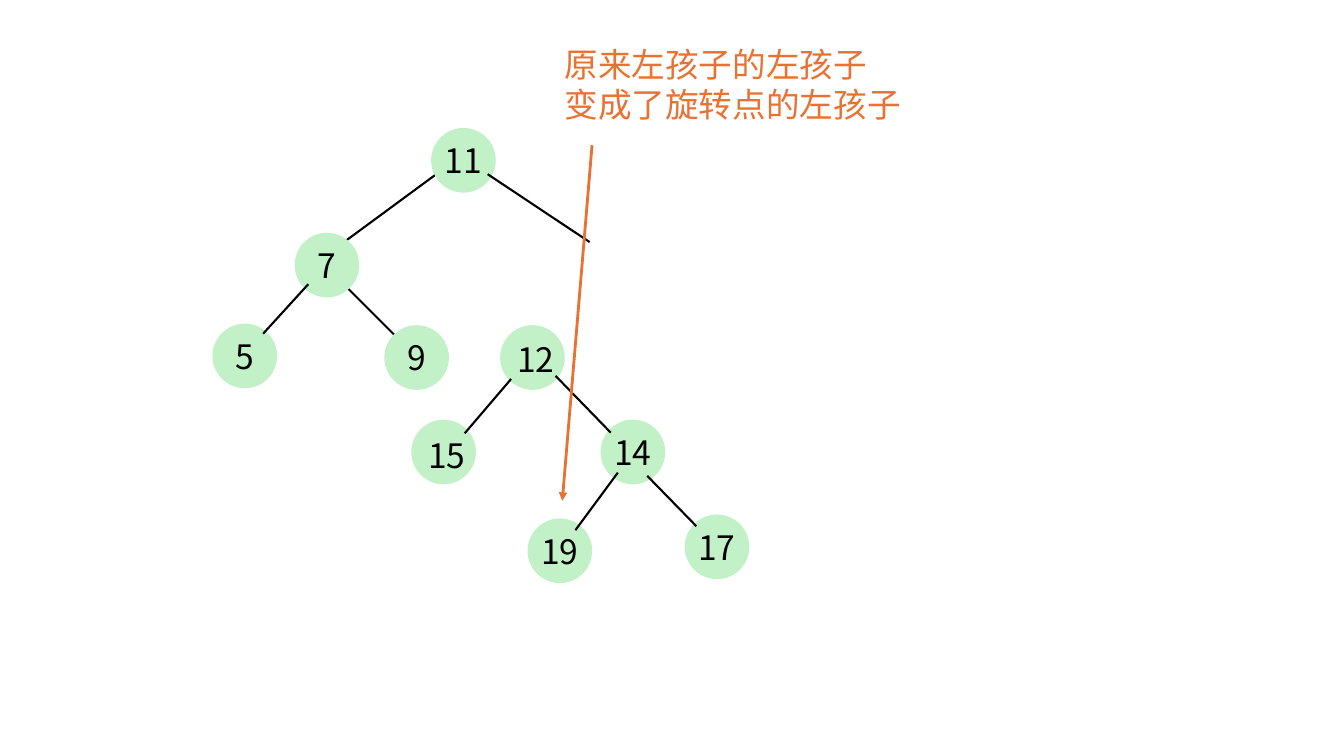
from lxml.etree import SubElement
from pptx import Presentation
from pptx.dml.color import RGBColor
from pptx.enum.shapes import MSO_CONNECTOR as LINE, MSO_SHAPE as SHAPE
from pptx.enum.text import MSO_ANCHOR as ANCHOR, MSO_AUTO_SIZE as FIT, PP_ALIGN as ALIGN
from pptx.oxml.ns import qn
from pptx.util import Cm, Pt

COLOURS = {"node": "C2F1C8", "ink": "000000", "accent": "E97132"}
FONT = "Noto Sans CJK SC"
DIAMETER = 1.63

# Node value: centre x, centre y in cm
NODES = {
    "11": (11.68, 4.04),
    "7": (8.24, 6.68),
    "5": (6.17, 8.97),
    "9": (10.5, 9.01),
    "12": (13.42, 9.01),
    "15": (11.18, 11.39),
    "14": (15.95, 11.39),
    "19": (14.11, 13.88),
    "17": (18.07, 13.78),
}
# Labels that sit right of and below the centre: shift x, shift y in cm
LABEL_SHIFTS = {"12": (0.08, 0.05), "15": (0.08, 0.08)}

# Branches from parent to child: start x, start y, end x, end y in cm
BRANCHES_BEHIND = [
    (11.02, 4.37, 8.71, 6.07),    # 11 to 7
    (8.71, 7.21, 10.03, 8.53),    # 7 to 9
]
BRANCHES_IN_FRONT = [
    (12.29, 4.39, 14.86, 6.1),    # 11 to its detached right side
    (7.77, 7.16, 6.63, 8.41),     # 7 to 5
    (12.88, 9.55, 11.71, 10.92),  # 12 to 15
    (14, 9.47, 15.39, 10.9),      # 12 to 14
    (15.57, 11.91, 14.5, 13.36),  # 14 to 19
    (16.31, 11.99, 17.55, 13.26), # 14 to 17
]
CAPTION = ["原来左孩子的左孩子", "变成了旋转点的左孩子"]


def add_span(para, text, colour):
    span = para.add_run()
    span.text = text
    span.font.size = Pt(24)
    span.font.name = FONT
    span.font.color.rgb = RGBColor.from_string(COLOURS[colour])
    SubElement(span.font._element, qn("a:ea"), typeface=FONT)


def add_line(ends, colour, width):
    line = page.shapes.add_connector(LINE.STRAIGHT, *[Cm(end) for end in ends])
    line.line.color.rgb = RGBColor.from_string(COLOURS[colour])
    line.line.width = Pt(width)
    SubElement(line._element.spPr, qn("a:effectLst"))
    return line


deck = Presentation()
deck.slide_width, deck.slide_height = Cm(33.87), Cm(19.05)
page = deck.slides.add_slide(deck.slide_layouts[6])

for branch in BRANCHES_BEHIND:
    add_line(branch, "ink", 1.5)

for value, (x, y) in NODES.items():
    node = page.shapes.add_shape(
        SHAPE.OVAL, Cm(x - DIAMETER / 2), Cm(y - DIAMETER / 2), Cm(DIAMETER), Cm(DIAMETER))
    node.shadow.inherit = False
    node.fill.solid()
    node.fill.fore_color.rgb = RGBColor.from_string(COLOURS["node"])
    node.line.fill.background()
    frame = node.text_frame
    frame.word_wrap = False
    frame.vertical_anchor = ANCHOR.MIDDLE
    shift_x, shift_y = LABEL_SHIFTS.get(value, (0, 0))
    frame.margin_left, frame.margin_top = Cm(2 * shift_x), Cm(2 * shift_y)
    frame.margin_right = frame.margin_bottom = 0
    frame.paragraphs[0].alignment = ALIGN.CENTER
    add_span(frame.paragraphs[0], value, "ink")

for branch in BRANCHES_IN_FRONT:
    add_line(branch, "ink", 1.5)

arrow = add_line((14.92, 3.66, 14.17, 12.62), "accent", 2)
SubElement(arrow.line._get_or_add_ln(), qn("a:tailEnd"), type="triangle")

caption = page.shapes.add_textbox(Cm(13.98), Cm(0.98), Cm(9.07), Cm(2.31))
frame = caption.text_frame
frame.word_wrap = False
frame.auto_size = FIT.SHAPE_TO_FIT_TEXT
for index, text in enumerate(CAPTION):
    para = frame.add_paragraph() if index else frame.paragraphs[0]
    add_span(para, text, "accent")

deck.save("out.pptx")
